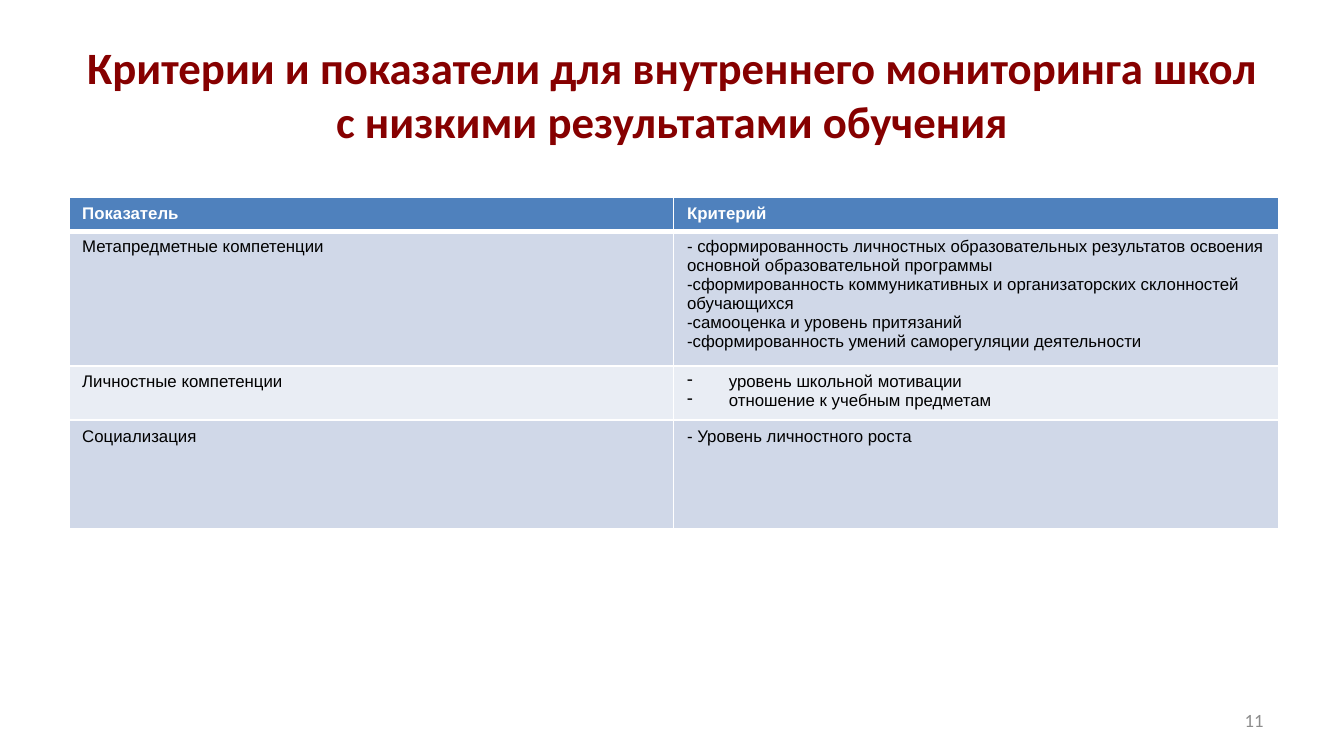
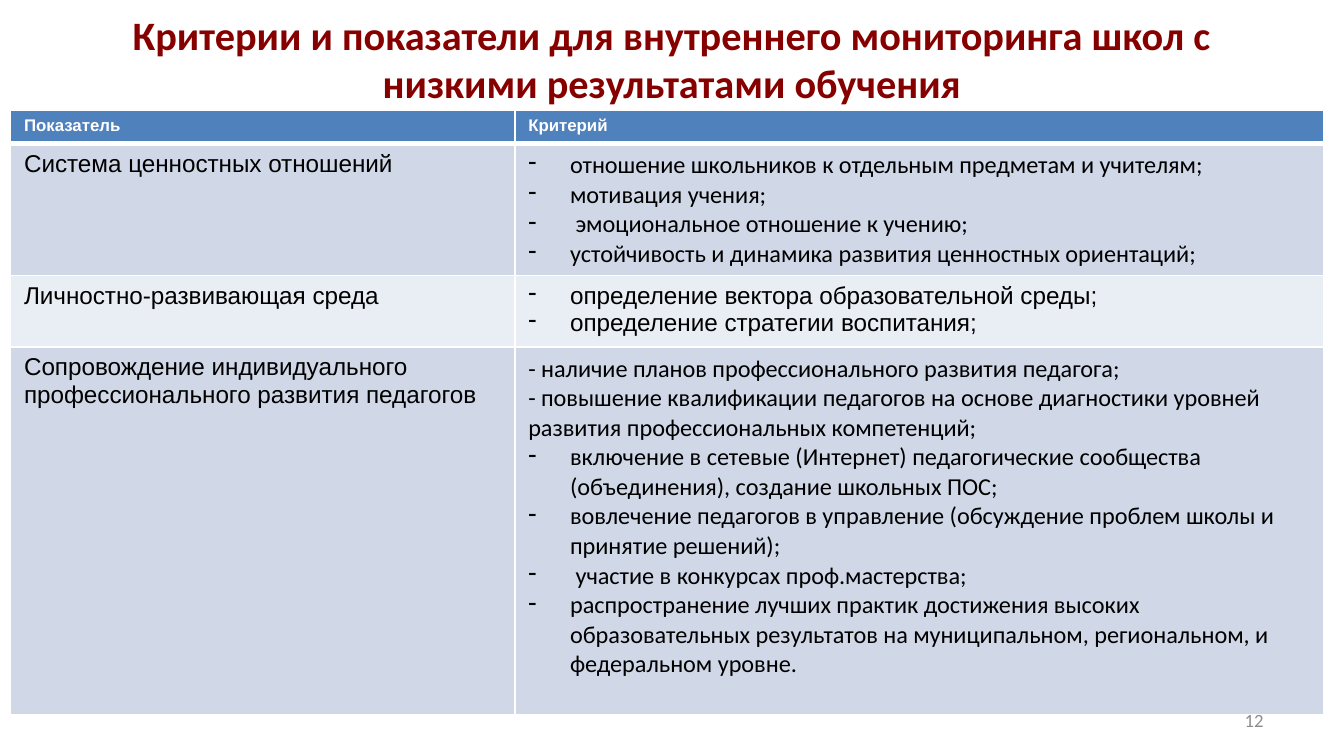
from lxml.etree import SubElement
from pptx import Presentation
from pptx.dml.color import RGBColor
from pptx.enum.text import MSO_ANCHOR, PP_ALIGN
from pptx.oxml.ns import qn
from pptx.util import Cm, Pt

# Shared style
TITLE_RED = "860000"
HEADER_BLUE = "4F81BD"
BAND_FILLS = ("D0D8E8", "E9EDF4")
WHITE = "FFFFFF"
BLACK = "000000"
GREY = "8C8C8C"

TITLE = "Критерии и показатели для внутреннего мониторинга школ с низкими результатами обучения"
HEADERS = ("Показатель", "Критерий")
BULLET = "• "  # marks a criterion set as a hanging dash item
BULLET_INDENT = Cm(0.79)

# Table rows: indicator, criteria
COMPETENCE_ROWS = [
    ("Метапредметные компетенции", [
        "- сформированность личностных образовательных результатов освоения основной образовательной программы",
        "-сформированность коммуникативных и организаторских склонностей обучающихся",
        "-самооценка и уровень притязаний",
        "-сформированность умений саморегуляции деятельности",
    ]),
    ("Личностные компетенции", [
        "• уровень школьной мотивации",
        "• отношение к учебным предметам",
    ]),
    ("Социализация", ["- Уровень личностного роста"]),
]
ENVIRONMENT_ROWS = [
    ("Система ценностных отношений", [
        "• отношение школьников к отдельным предметам и учителям;",
        "• мотивация учения;",
        "•  эмоциональное отношение к учению;",
        "• устойчивость и динамика развития ценностных ориентаций;",
    ]),
    ("Личностно-развивающая среда", [
        "• определение вектора образовательной среды;",
        "• определение стратегии воспитания;",
    ]),
    ("Сопровождение индивидуального профессионального развития педагогов", [
        "- наличие планов профессионального развития педагога;",
        "- повышение квалификации педагогов на основе диагностики уровней развития профессиональных компетенций;",
        "• включение в сетевые (Интернет) педагогические сообщества (объединения), создание школьных ПОС;",
        "• вовлечение педагогов в управление (обсуждение проблем школы и принятие решений);",
        "•  участие в конкурсах проф.мастерства;",
        "• распространение лучших практик достижения высоких образовательных результатов "
        "на муниципальном, региональном, и федеральном уровне.",
    ]),
]


def color(hex_string):
    return RGBColor.from_string(hex_string)


def style_font(paragraph, name, size, hex_string, bold=False):
    font = paragraph.font
    font.name, font.size, font.bold = name, Pt(size), bold
    font.color.rgb = color(hex_string)


def add_text(slide, box, text, size, hex_string, alignment, bold=False):
    frame = slide.shapes.add_textbox(*map(Cm, box)).text_frame
    frame.word_wrap = True
    frame.vertical_anchor = MSO_ANCHOR.MIDDLE
    paragraph = frame.paragraphs[0]
    paragraph.text = text
    paragraph.alignment = alignment
    style_font(paragraph, "Calibri", size, hex_string, bold)


def add_dash_bullet(paragraph):
    properties = paragraph._p.get_or_add_pPr()
    properties.set("marL", str(BULLET_INDENT))
    properties.set("indent", str(-BULLET_INDENT))
    SubElement(properties, qn("a:buChar"), char="-")


def set_borders(cell, top, bottom):
    """White borders on all sides; top and bottom widths are in points."""
    properties = cell._tc.get_or_add_tcPr()
    for side, width in (("L", 1), ("R", 1), ("T", top), ("B", bottom)):
        line = SubElement(properties, qn(f"a:ln{side}"), w=str(Pt(width)))
        fill = SubElement(line, qn("a:solidFill"))
        SubElement(fill, qn("a:srgbClr"), val=WHITE)


def fill_cell(cell, lines, fill, font, size, text_color, bold=False, top=1, bottom=1):
    set_borders(cell, top, bottom)
    cell.fill.solid()
    cell.fill.fore_color.rgb = color(fill)
    frame = cell.text_frame
    for index, line in enumerate(lines):
        paragraph = frame.add_paragraph() if index else frame.paragraphs[0]
        paragraph.text = line.removeprefix(BULLET)
        if line.startswith(BULLET):
            add_dash_bullet(paragraph)
        style_font(paragraph, font, size, text_color, bold)


def add_criteria_table(slide, left, top, widths, heights, rows, size, criteria_fonts):
    table = slide.shapes.add_table(
        len(heights), len(widths), Cm(left), Cm(top), Cm(sum(widths)), Cm(sum(heights))
    ).table
    for column, width in zip(table.columns, widths):
        column.width = Cm(width)
    for row, height in zip(table.rows, heights):
        row.height = Cm(height)

    for column, header in enumerate(HEADERS):
        fill_cell(table.cell(0, column), [header], HEADER_BLUE, "Arial", 9, WHITE,
                  bold=True, bottom=3)
    for number, ((indicator, criteria), font) in enumerate(zip(rows, criteria_fonts), 1):
        fill = BAND_FILLS[(number - 1) % 2]
        top_border = 3 if number == 1 else 1
        fill_cell(table.cell(number, 0), [indicator], fill, "Arial", size, BLACK, top=top_border)
        fill_cell(table.cell(number, 1), criteria, fill, font, size, BLACK, top=top_border)


def add_criteria_slide(presentation, number, title_box, title_size, **table):
    slide = presentation.slides.add_slide(presentation.slide_layouts[6])
    add_text(slide, title_box, TITLE, title_size, TITLE_RED, PP_ALIGN.CENTER, bold=True)
    add_criteria_table(slide, **table)
    add_text(slide, (18.2, 13.24, 5.93, 0.76), str(number), 10, GREY, PP_ALIGN.RIGHT)


def main():
    presentation = Presentation()
    presentation.slide_width, presentation.slide_height = Cm(25.4), Cm(14.29)

    # Competences and socialisation
    add_criteria_slide(
        presentation, 11, (1.27, 0.58, 22.86, 2.39), 24,
        left=1.3, top=3.73, widths=(11.43, 11.43), heights=(0.61, 2.37, 1.03, 2.06),
        rows=COMPETENCE_ROWS, size=9, criteria_fonts=("Arial", "Arial", "Arial"),
    )
    # Values, environment and teacher development
    add_criteria_slide(
        presentation, 12, (1.27, 0.13, 22.86, 1.96), 21.6,
        left=0.2, top=2.08, widths=(9.53, 15.29), heights=(0.61, 2.49, 1.29, 6.94),
        rows=ENVIRONMENT_ROWS, size=13, criteria_fonts=("Calibri", "Arial", "Calibri"),
    )
    presentation.save("out.pptx")


if __name__ == "__main__":
    main()
